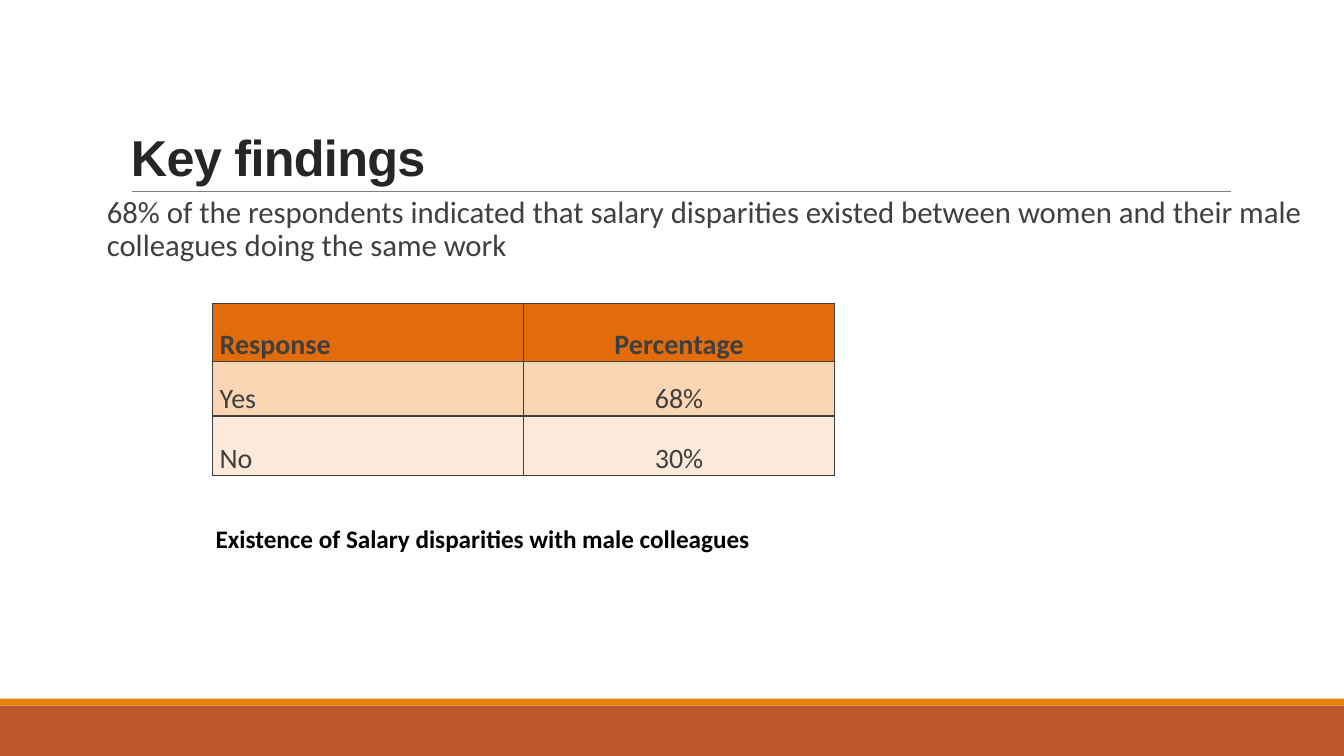
from dataclasses import dataclass
from lxml.etree import SubElement
from pptx import Presentation
from pptx.dml.color import RGBColor
from pptx.enum.shapes import MSO_CONNECTOR, MSO_SHAPE
from pptx.enum.text import MSO_ANCHOR, MSO_AUTO_SIZE, PP_ALIGN
from pptx.oxml import parse_xml
from pptx.oxml.ns import nsdecls, qn
from pptx.util import Pt


@dataclass(frozen=True)
class Theme:
    heading_font: str = "Arial"
    body_font: str = "Calibri"
    title_size: float = 36
    body_size: float = 22
    table_size: float = 20
    caption_size: float = 18
    title: str = "262626"
    body: str = "404040"
    caption: str = "000000"
    table_ink: str = "3F3F3F"
    rule: str = "808080"
    footer: str = "BD582C"
    footer_edge: str = "E48312"
    row_fills: tuple = ("E26B0A", "FCD5B4", "FDE9D9")


THEME = Theme()


def color(value):
    return RGBColor.from_string(value)


def apply(target, formats):
    for name, value in formats.items():
        setattr(target, name, value)


def write(frame, text, font, ink, frame_format, para_format):
    """Fill a text frame with one paragraph and return its span."""
    apply(frame, {"word_wrap": True, **frame_format})
    para = frame.paragraphs[0]
    apply(para, para_format)
    span = para.add_run()
    span.text = text
    apply(span.font, font)
    span.font.color.rgb = color(ink)
    return span


def add_text(page, box, *content):
    frame = page.shapes.add_textbox(*map(Pt, box)).text_frame
    return write(frame, *content)


def add_footer(page, box):
    left, top, width, height = box
    edge = 5
    bands = ((top + edge, height - edge, THEME.footer), (top, edge, THEME.footer_edge))
    for band_top, band_height, fill in bands:
        band = page.shapes.add_shape(
            MSO_SHAPE.RECTANGLE, Pt(left), Pt(band_top), Pt(width), Pt(band_height))
        band.shadow.inherit = False
        band.fill.solid()
        band.fill.fore_color.rgb = color(fill)
        band.line.fill.background()


def add_heading(page, box):
    left, top, width, height = box
    # Rule under the title
    bottom = Pt(top + height)
    rule = page.shapes.add_connector(
        MSO_CONNECTOR.STRAIGHT, Pt(left + 8), bottom, Pt(left + width + 1), bottom)
    rule.line.width = Pt(0.5)
    rule.line.color.rgb = color(THEME.rule)
    SubElement(rule._element.spPr, qn("a:effectLst"))
    # Title, slightly tightened
    span = add_text(
        page, box, "Key findings",
        {"name": THEME.heading_font, "size": Pt(THEME.title_size), "bold": True},
        THEME.title, {"vertical_anchor": MSO_ANCHOR.BOTTOM}, {"line_spacing": 0.85})
    span.font._element.set("spc", "-50")


def add_finding(page, box):
    add_text(
        page, box,
        "68% of the respondents indicated that salary disparities existed "
        "between women and their male colleagues doing the same work",
        {"name": THEME.body_font, "size": Pt(THEME.body_size)}, THEME.body,
        {"margin_left": 0, "margin_right": 0},
        {"line_spacing": 0.9, "space_after": Pt(12)})


def add_borders(cell):
    properties = cell._tc.get_or_add_tcPr()
    for index, side in enumerate(("lnL", "lnR", "lnT", "lnB")):
        properties.insert(index, parse_xml(
            f'<a:{side} {nsdecls("a")} w="12700"><a:solidFill>'
            f'<a:srgbClr val="{THEME.table_ink}"/></a:solidFill></a:{side}>'))


def add_responses(page, box):
    rows = (("Response", "Percentage"), ("Yes", "68%"), ("No", "30%"))
    heights = (41.6, 38.9, 42.6)
    alignments = (PP_ALIGN.JUSTIFY, PP_ALIGN.CENTER)
    table = page.shapes.add_table(len(rows), len(alignments), *map(Pt, box)).table
    for column in table.columns:
        column.width = Pt(box[2] / len(alignments))
    for row_index, texts in enumerate(rows):
        table.rows[row_index].height = Pt(heights[row_index])
        for column_index, text in enumerate(texts):
            cell = table.cell(row_index, column_index)
            apply(cell, {
                "vertical_anchor": MSO_ANCHOR.BOTTOM, "margin_left": Pt(5),
                "margin_right": Pt(5), "margin_top": 0, "margin_bottom": 0})
            cell.fill.solid()
            cell.fill.fore_color.rgb = color(THEME.row_fills[row_index])
            add_borders(cell)
            write(
                cell.text_frame, text,
                {"name": THEME.body_font, "size": Pt(THEME.table_size),
                 "bold": row_index == 0},
                THEME.table_ink, {},
                {"alignment": alignments[column_index], "line_spacing": 1.15})


def add_caption(page, box):
    add_text(
        page, box, "Existence of Salary disparities with male colleagues",
        {"name": THEME.body_font, "size": Pt(THEME.caption_size), "bold": True},
        THEME.caption, {"auto_size": MSO_AUTO_SIZE.SHAPE_TO_FIT_TEXT}, {})


def build_findings(deck):
    page = deck.slides.add_slide(deck.slide_layouts[6])
    add_footer(page, (0, 499, 960, 41))
    add_heading(page, (86.4, 22.5, 792, 114.3))
    add_finding(page, (76.3, 136.8, 868.3, 325.4))
    add_caption(page, (146.9, 370.1, 478, 29))
    add_responses(page, (151.9, 216.7, 444.2, 123.1))


def main():
    deck = Presentation()
    apply(deck, {"slide_width": Pt(960), "slide_height": Pt(540)})
    build_findings(deck)
    deck.save("out.pptx")


if __name__ == "__main__":
    main()
